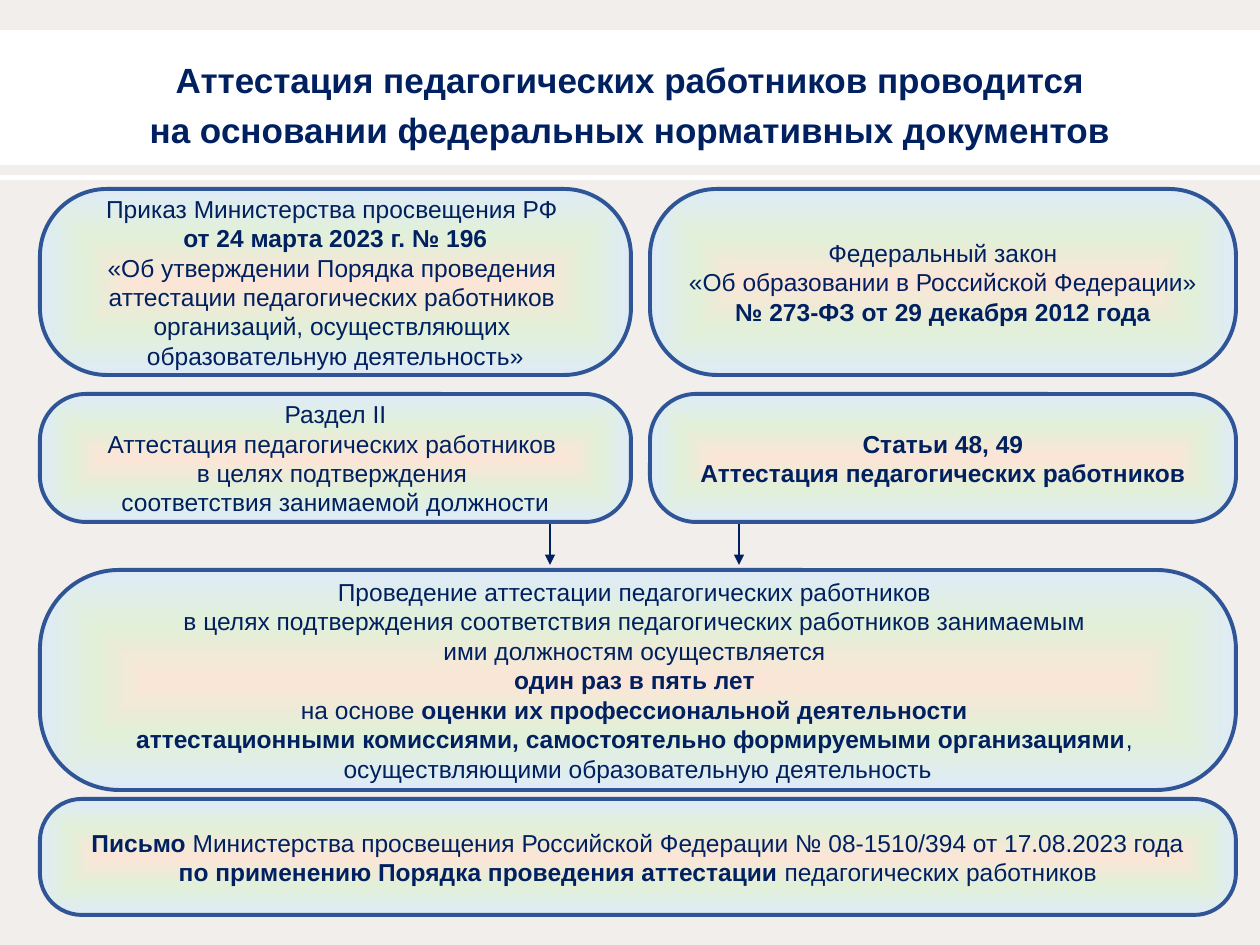
from dataclasses import dataclass

from lxml import etree
from pptx import Presentation
from pptx import util as u
from pptx.dml.color import RGBColor
from pptx.enum import shapes, text
from pptx.oxml import parse_xml
from pptx.oxml.ns import nsdecls, qn

SCALE = 914400 / 126  # EMU per px
NAVY = RGBColor(0x00, 0x20, 0x60)
BLUE = RGBColor(0x2F, 0x55, 0x97)
WHITE = RGBColor(0xFF, 0xFF, 0xFF)
PAPER = RGBColor(0xF1, 0xEE, 0xEB)
STOPS = (
    (0, RGBColor(0xFB, 0xE5, 0xD6)),
    (50, RGBColor(0xE2, 0xF0, 0xD9)),
    (100, RGBColor(0xDE, 0xEB, 0xF7)),
)

# Columns shared by the panels
LEFT, RIGHT = 40, 650
LEFT_W, RIGHT_W = 591, 586
FULL_W = RIGHT + RIGHT_W - LEFT


@dataclass(frozen=True)
class Panel:
    x: int
    y: int
    w: int
    h: int
    lines: tuple[str, ...]  # ** switches bold on and off


PANELS = (
    Panel(RIGHT, 394, RIGHT_W, 128, (
        "**Статьи 48, 49",
        "**Аттестация педагогических работников",
    )),
    Panel(LEFT, 570, FULL_W, 220, (
        "Проведение аттестации педагогических работников ",
        "в целях подтверждения соответствия педагогических работников занимаемым ",
        "ими должностям осуществляется ",
        "**один раз в пять лет ",
        "на основе **оценки их профессиональной деятельности ",
        "**аттестационными комиссиями, самостоятельно формируемыми организациями**, ",
        "осуществляющими образовательную деятельность",
    )),
    Panel(LEFT, 394, LEFT_W, 128, (
        "Раздел II",
        "Аттестация педагогических работников ",
        "в целях подтверждения ",
        "соответствия занимаемой должности",
    )),
    Panel(RIGHT, 189, RIGHT_W, 186, (
        "Федеральный закон",
        "«Об образовании в Российской Федерации»",
        "**№ 273-ФЗ от 29 декабря 2012 года",
    )),
    Panel(LEFT, 189, LEFT_W, 186, (
        "Приказ Министерства просвещения РФ ",
        "**от 24 марта 2023 г. № 196",
        "«Об утверждении Порядка проведения ",
        "аттестации педагогических работников ",
        "организаций, осуществляющих ",
        "образовательную деятельность»",
    )),
    Panel(LEFT, 799, FULL_W, 116, (
        "**Письмо** Министерства просвещения Российской Федерации № 08-1510/394 от 17.08.2023 года",
        "**по применению Порядка проведения аттестации** педагогических работников",
    )),
)


def px(n: int) -> u.Emu:
    return u.Emu(round(n * SCALE))


def add_text(p, content: str, *, size: int = 14, bold: bool = False) -> None:
    """Add one run to a centred paragraph."""
    p.alignment = text.PP_ALIGN.CENTER
    r = p.add_run()
    r.text = content
    r.font.name = "Arial"
    r.font.size = u.Pt(size)
    r.font.bold = bold
    r.font.color.rgb = NAVY


def add_band(s, x: int, y: int, w: int, h: int):
    sp = s.shapes.add_shape(shapes.MSO_SHAPE.RECTANGLE, px(x), px(y), px(w), px(h))
    sp.shadow.inherit = False
    sp.fill.solid()
    sp.fill.fore_color.rgb = WHITE
    sp.line.fill.background()
    return sp


def fill_gradient(sp) -> None:
    """Give the shape a gradient that spreads from its centre."""
    stops = "".join(
        f'<a:gs pos="{pos * 1000}"><a:srgbClr val="{color}"/></a:gs>'
        for pos, color in STOPS
    )
    grad = parse_xml(
        f'<a:gradFill {nsdecls("a")} rotWithShape="1"><a:gsLst>{stops}</a:gsLst>'
        '<a:path path="shape"><a:fillToRect l="50000" t="50000" r="50000" b="50000"/>'
        "</a:path></a:gradFill>"
    )
    sp.fill.background()
    props = sp._element.spPr
    props.replace(props.find(qn("a:noFill")), grad)


def add_panel(s, panel: Panel) -> None:
    sp = s.shapes.add_shape(shapes.MSO_SHAPE.ROUNDED_RECTANGLE,
                            px(panel.x), px(panel.y), px(panel.w), px(panel.h))
    sp.adjustments[0] = 0.36
    sp.shadow.inherit = False
    fill_gradient(sp)
    sp.line.color.rgb = BLUE
    sp.line.width = u.Pt(2.25)
    tf = sp.text_frame
    tf.word_wrap = False
    tf.vertical_anchor = text.MSO_ANCHOR.MIDDLE
    for i, line in enumerate(panel.lines):
        p = tf.add_paragraph() if i else tf.paragraphs[0]
        for j, part in enumerate(line.split("**")):
            if part:
                add_text(p, part, bold=j % 2 == 1)


def add_arrow(s, x: int, top: int, bottom: int) -> None:
    cn = s.shapes.add_connector(shapes.MSO_CONNECTOR.STRAIGHT,
                                px(x), px(top), px(x), px(bottom))
    cn.line.color.rgb = NAVY
    cn.line.width = u.Pt(1.5)
    props = cn._element.spPr
    etree.SubElement(props.find(qn("a:ln")), qn("a:tailEnd"), type="triangle")
    etree.SubElement(props, qn("a:effectLst"))


def set_title(s, *lines: str) -> None:
    title = s.shapes.title
    title.left, title.top, title.width, title.height = px(0), px(35), px(1260), px(130)
    tf = title.text_frame
    tf.word_wrap = True
    tf.vertical_anchor = text.MSO_ANCHOR.MIDDLE
    p = tf.paragraphs[0]
    p.line_spacing = 1.2
    for i, line in enumerate(lines):
        if i:
            p.add_line_break()
        add_text(p, line, size=20, bold=True)


def main() -> None:
    prs = Presentation()
    prs.slide_width, prs.slide_height = px(1260), px(945)
    s = prs.slides.add_slide(prs.slide_layouts[5])
    s.background.fill.solid()
    s.background.fill.fore_color.rgb = PAPER

    # Heading on a white band, with a thin stripe below
    set_title(s, "Аттестация педагогических работников проводится",
              "на основании федеральных нормативных документов")
    band = add_band(s, 0, 30, 1260, 135)
    s.shapes.title._element.addprevious(band._element)
    add_band(s, 0, 175, 1260, 5)

    # Panels and the arrows between them
    for panel in PANELS:
        add_panel(s, panel)
    for x in (550, 739):
        add_arrow(s, x, 524, 565)

    prs.save("out.pptx")


if __name__ == "__main__":
    main()
